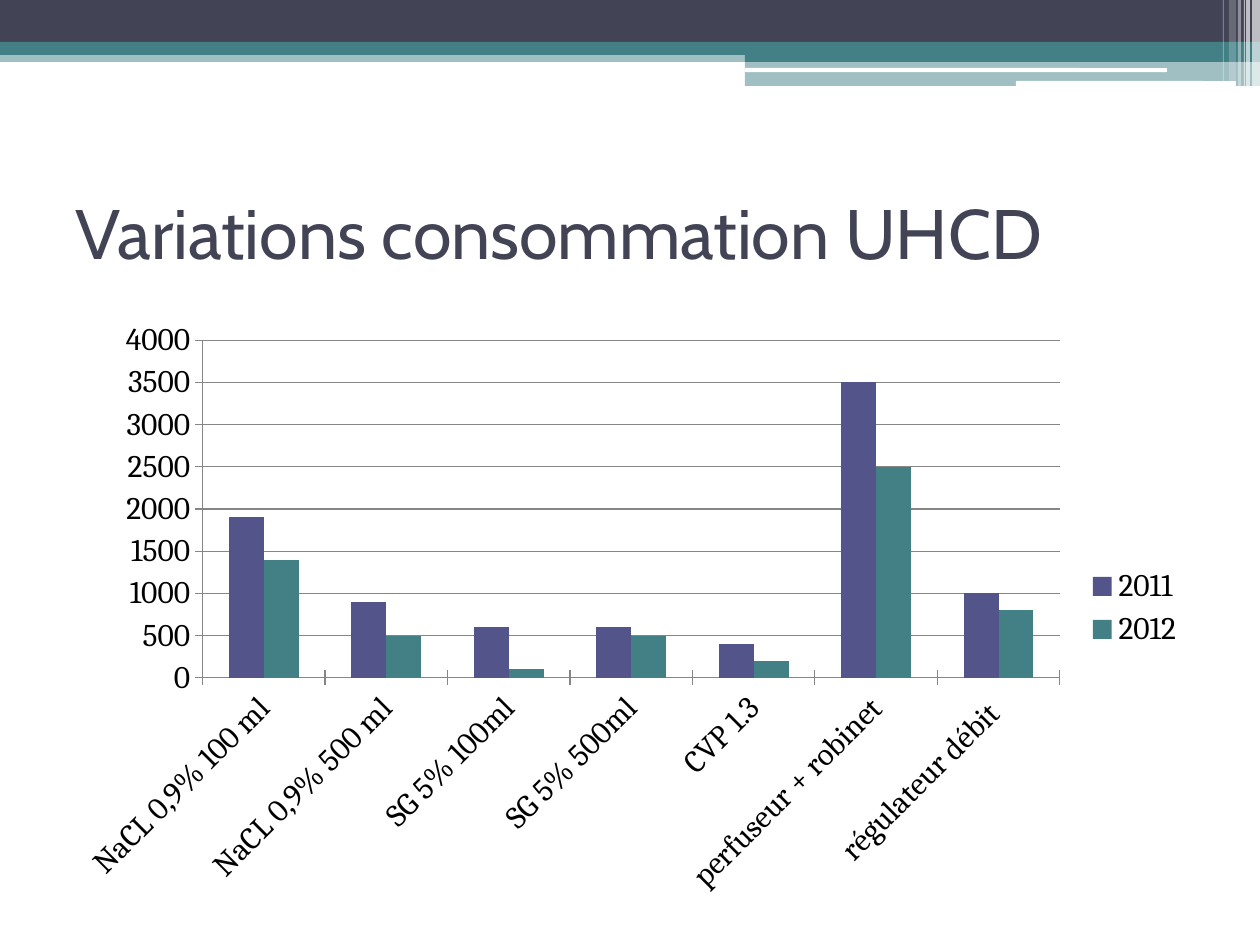
from lxml import etree
from pptx import Presentation
from pptx.chart.data import CategoryChartData
from pptx.dml.color import RGBColor
from pptx.enum.chart import XL_CHART_TYPE, XL_LEGEND_POSITION, XL_TICK_MARK
from pptx.enum.shapes import MSO_SHAPE
from pptx.enum.text import MSO_ANCHOR
from pptx.oxml.ns import qn
from pptx.util import Pt

RECT, ROUND = MSO_SHAPE.RECTANGLE, MSO_SHAPE.ROUNDED_RECTANGLE
COLUMNS = XL_CHART_TYPE.COLUMN_CLUSTERED
RIGHT = XL_LEGEND_POSITION.RIGHT
CROSS = XL_TICK_MARK.CROSS
MIDDLE = MSO_ANCHOR.MIDDLE

SLATE = RGBColor(0x42, 0x44, 0x56)
TEAL = RGBColor(0x43, 0x80, 0x86)
INDIGO = RGBColor(0x53, 0x54, 0x8A)
WHITE = RGBColor(0xFF, 0xFF, 0xFF)
BLACK = RGBColor(0, 0, 0)
GRAY = RGBColor(0x86, 0x86, 0x86)


def px(*lengths):
    return [round(v * 914400 / 126) for v in lengths]


def set_font(font, **values):
    for name, value in values.items():
        if name == "color":
            font.color.rgb = value
        else:
            setattr(font, name, value)


prs = Presentation()
prs.slide_width, prs.slide_height = px(1260, 945)
s = prs.slides.add_slide(prs.slide_layouts[6])

bands = [
    (RECT, 0, 50, 1260, 12, TEAL, 50),
    (RECT, 0, 0, 1260, 42, SLATE, 100),
    (RECT, 0, 42, 1260, 13, TEAL, 100),
    (RECT, 745, 49, 515, 13, TEAL, 100),
    (RECT, 745, 62, 515, 24, TEAL, 50),
    (ROUND, 745, 68, 422, 4, WHITE, 100),
    (ROUND, 1016, 81, 220, 5, WHITE, 100),
]
stripes = [
    (1252, 8, 86, 65),
    (1246, 4, 86, 65),
    (1244, 1, 86, 60),
    (1238, 3, 86, 40),
    (1229, 7, 81, 20),
    (1223, 1, 81, 30),
]
bands += [(RECT, x, 0, w, h, WHITE, alpha) for x, w, h, alpha in stripes]
for kind, x, y, w, h, color, alpha in bands:
    sp = s.shapes.add_shape(kind, *px(x, y, w, h))
    sp.shadow.inherit = False
    sp.fill.solid()
    sp.fill.fore_color.rgb = color
    sp.line.fill.background()
    if alpha < 100:
        clr = sp.fill._xPr.find(".//" + qn("a:srgbClr"))
        etree.SubElement(clr, qn("a:alpha"), val=str(alpha * 1000))

tf = s.shapes.add_textbox(*px(63, 158, 1134, 147)).text_frame
tf.word_wrap = True
tf.vertical_anchor = MIDDLE
r = tf.paragraphs[0].add_run()
r.text = "Variations consommation UHCD"
set_font(r.font, name="Cabin", size=Pt(40), color=SLATE)

data = CategoryChartData()
data.categories = [
    "NaCL 0,9% 100 ml", "NaCL 0,9% 500 ml", "SG 5% 100ml", "SG 5% 500ml",
    "CVP 1.3", "perfuseur + robinet", "régulateur débit ",
]
data.add_series("2011", [1900, 900, 600, 600, 400, 3500, 1000])
data.add_series("2012", [1400, 500, 100, 500, 200, 2500, 800])
chart = s.shapes.add_chart(COLUMNS, *px(63, 310, 1134, 596), data).chart
set_font(chart.font, name="Cambria", size=Pt(18), color=BLACK)
chart.has_title = False
chart.has_legend = True
chart.legend.position = RIGHT
chart.legend.include_in_layout = False

plot = chart.plots[0]
plot.gap_width = 150
plot.vary_by_categories = False
for series, color in zip(plot.series, (INDIGO, TEAL)):
    series.format.fill.solid()
    series.format.fill.fore_color.rgb = color

value_axis = chart.value_axis
value_axis.minimum_scale, value_axis.maximum_scale = 0, 4000
value_axis.major_unit = 500
value_axis.has_major_gridlines = True
for axis in (chart.category_axis, value_axis):
    axis.major_tick_mark = CROSS
for part in (chart.category_axis, value_axis, value_axis.major_gridlines):
    part.format.line.color.rgb = GRAY
    part.format.line.width = Pt(0.75)

prs.save("out.pptx")
